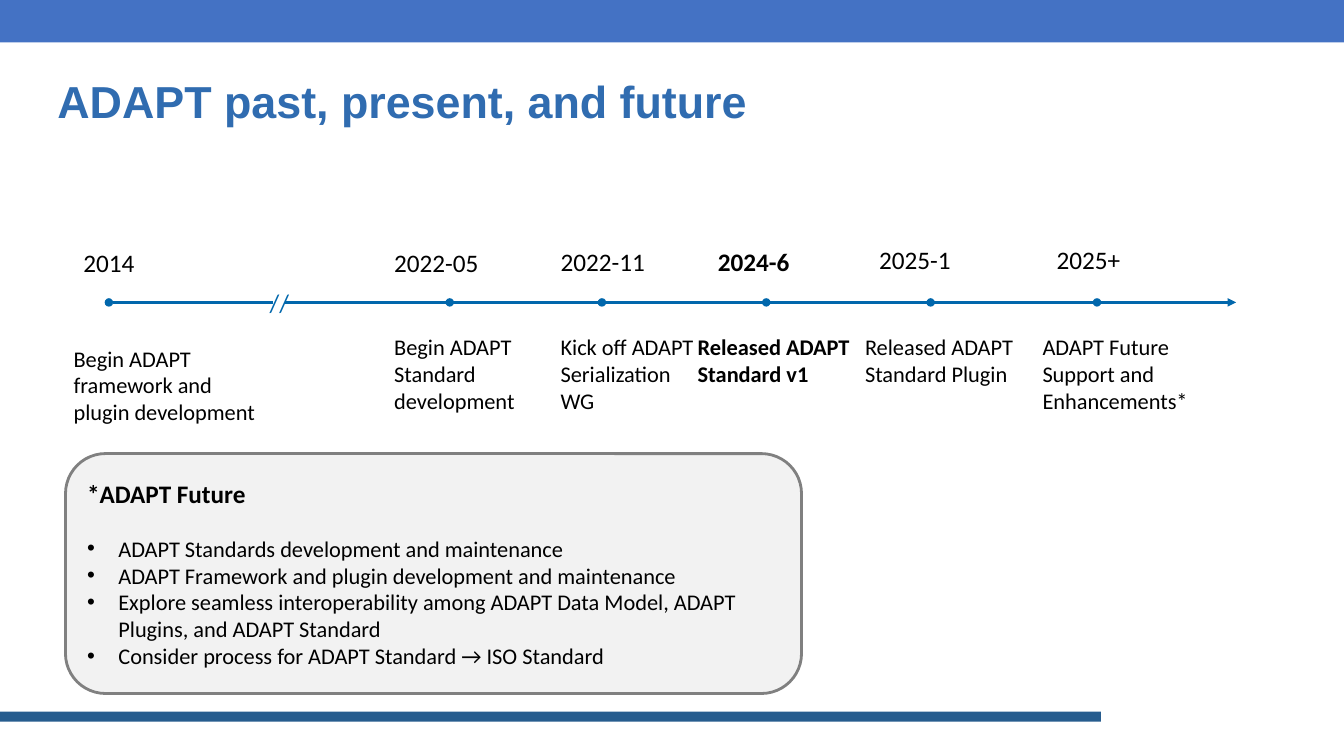
from dataclasses import dataclass

from lxml import etree
from pptx import Presentation
from pptx.dml.color import RGBColor
from pptx.enum.shapes import MSO_CONNECTOR, MSO_SHAPE
from pptx.enum.text import MSO_ANCHOR, PP_ALIGN
from pptx.oxml.ns import qn
from pptx.util import Pt

PX = 9144
RECT = MSO_SHAPE.RECTANGLE
ROUND = MSO_SHAPE.ROUNDED_RECTANGLE
LINE = MSO_CONNECTOR.STRAIGHT
LEFT, CENTER = PP_ALIGN.LEFT, PP_ALIGN.CENTER
TOP, MIDDLE = MSO_ANCHOR.TOP, MSO_ANCHOR.MIDDLE
AXIS = 300
COLORS = {
    "band": "4472C4", "foot": "265C8E", "title": "306CB0", "axis": "0167AC",
    "text": "000000", "panel": "F2F2F2", "edge": "808080",
}


@dataclass
class Box:
    x: int
    y: int
    w: int
    h: int


@dataclass
class Font:
    size: int
    color: str = "text"
    bold: bool = False
    name: str = "Calibri"


@dataclass
class Event:
    date: str
    date_box: Box
    note: str
    note_box: Box
    bold: bool = False
    align: PP_ALIGN = LEFT


@dataclass
class Span:
    start: int
    end: int
    head: str = ""
    tail: str = "oval"


EVENTS = [
    Event("2014", Box(68, 240, 80, 40),
          "Begin ADAPT framework and plugin development", Box(68, 337, 201, 91), align=CENTER),
    Event("2022-05", Box(386, 240, 107, 40),
          "Begin ADAPT Standard development", Box(386, 326, 142, 91)),
    Event("2022-11", Box(551, 239, 107, 40),
          "Kick off ADAPT Serialization WG", Box(551, 326, 142, 118)),
    Event("2024-6", Box(707, 239, 107, 40),
          "Released ADAPT Standard v1", Box(687, 326, 166, 64), bold=True),
    Event("2025-1", Box(867, 237, 107, 40),
          "Released ADAPT Standard Plugin", Box(853, 326, 166, 64)),
    Event("2025+", Box(1043, 237, 107, 40),
          "ADAPT Future Support and Enhancements*", Box(1029, 326, 166, 91)),
]
SPANS = [
    Span(108, 271, head="oval", tail=""),
    Span(283, 446),
    Span(446, 597),
    Span(597, 760),
    Span(760, 923),
    Span(923, 1088),
    Span(1088, 1226, tail="triangle"),
]
GOALS = [
    "ADAPT Standards development and maintenance",
    "ADAPT Framework and plugin development and maintenance",
    "Explore seamless interoperability among ADAPT Data Model, ADAPT Plugins, and ADAPT Standard",
    "Consider process for ADAPT Standard → ISO Standard",
]


def rgb(key: str) -> RGBColor:
    return RGBColor.from_string(COLORS[key])


def scale(box: Box) -> list[int]:
    return [n * PX for n in (box.x, box.y, box.w, box.h)]


def set_frame(frame, inset: int, anchor) -> None:
    frame.word_wrap = True
    frame.vertical_anchor = anchor
    frame.margin_left = frame.margin_right = inset * PX
    frame.margin_top = frame.margin_bottom = inset * PX


def add_run(para, text: str, font: Font) -> None:
    run = para.add_run()
    run.text = text
    run.font.size = Pt(font.size)
    run.font.name = font.name
    run.font.bold = font.bold
    run.font.color.rgb = rgb(font.color)


def add_text(slide, box: Box, text: str, font: Font, align=LEFT, inset: int = 5, anchor=TOP):
    frame = slide.shapes.add_textbox(*scale(box)).text_frame
    set_frame(frame, inset, anchor)
    para = frame.paragraphs[0]
    para.alignment = align
    add_run(para, text, font)
    return para


def add_block(slide, kind, box: Box, fill: str, edge: str = ""):
    shape = slide.shapes.add_shape(kind, *scale(box))
    shape.shadow.inherit = False
    shape.fill.solid()
    shape.fill.fore_color.rgb = rgb(fill)
    if edge:
        shape.line.color.rgb = rgb(edge)
        shape.line.width = Pt(2)
    else:
        shape.line.fill.background()
    return shape


def add_span(slide, span: Span) -> None:
    y = AXIS * PX
    line = slide.shapes.add_connector(LINE, span.start * PX, y, span.end * PX, y)
    line.line.color.rgb = rgb("axis")
    line.line.width = Pt(2)
    props = line.line._get_or_add_ln()
    for tag, end in (("a:headEnd", span.head), ("a:tailEnd", span.tail)):
        if end:
            etree.SubElement(props, qn(tag), type=end)
    etree.SubElement(line._element.spPr, qn("a:effectLst"))


def add_goal(frame, text: str, gap: int) -> None:
    para = frame.add_paragraph()
    para.alignment = LEFT
    para.space_before = Pt(gap)
    props = para._p.get_or_add_pPr()
    props.set("marL", str(31 * PX))
    props.set("indent", str(-31 * PX))
    etree.SubElement(props, qn("a:buFont"), typeface="Arial")
    etree.SubElement(props, qn("a:buChar"), char="•")
    add_run(para, text, Font(16))


def add_panel(slide) -> None:
    frame = add_block(slide, ROUND, Box(65, 450, 730, 238), "panel", "edge").text_frame
    set_frame(frame, 10, MIDDLE)
    para = frame.paragraphs[0]
    para.alignment = LEFT
    add_run(para, "*ADAPT Future", Font(18, bold=True))
    for i, goal in enumerate(GOALS):
        add_goal(frame, goal, 0 if i else 19)


def main() -> None:
    deck = Presentation()
    deck.slide_width, deck.slide_height = 1333 * PX, 750 * PX
    slide = deck.slides.add_slide(deck.slide_layouts[6])
    add_block(slide, RECT, Box(0, 706, 1092, 10), "foot")
    add_block(slide, RECT, Box(0, 0, 1333, 42), "band")
    title = add_text(slide, Box(47, 67, 1149, 72), "ADAPT past, present, and future",
                     Font(32, "title", True, "Arial"), inset=10, anchor=MIDDLE)
    title.line_spacing = 0.9
    for span in SPANS:
        add_span(slide, span)
    add_text(slide, Box(261, 280, 32, 40), "//", Font(18, "axis"), CENTER)
    for event in EVENTS:
        add_text(slide, event.date_box, event.date, Font(18, bold=event.bold), event.align)
        add_text(slide, event.note_box, event.note, Font(16, bold=event.bold))
    add_panel(slide)
    deck.save("out.pptx")


if __name__ == "__main__":
    main()
